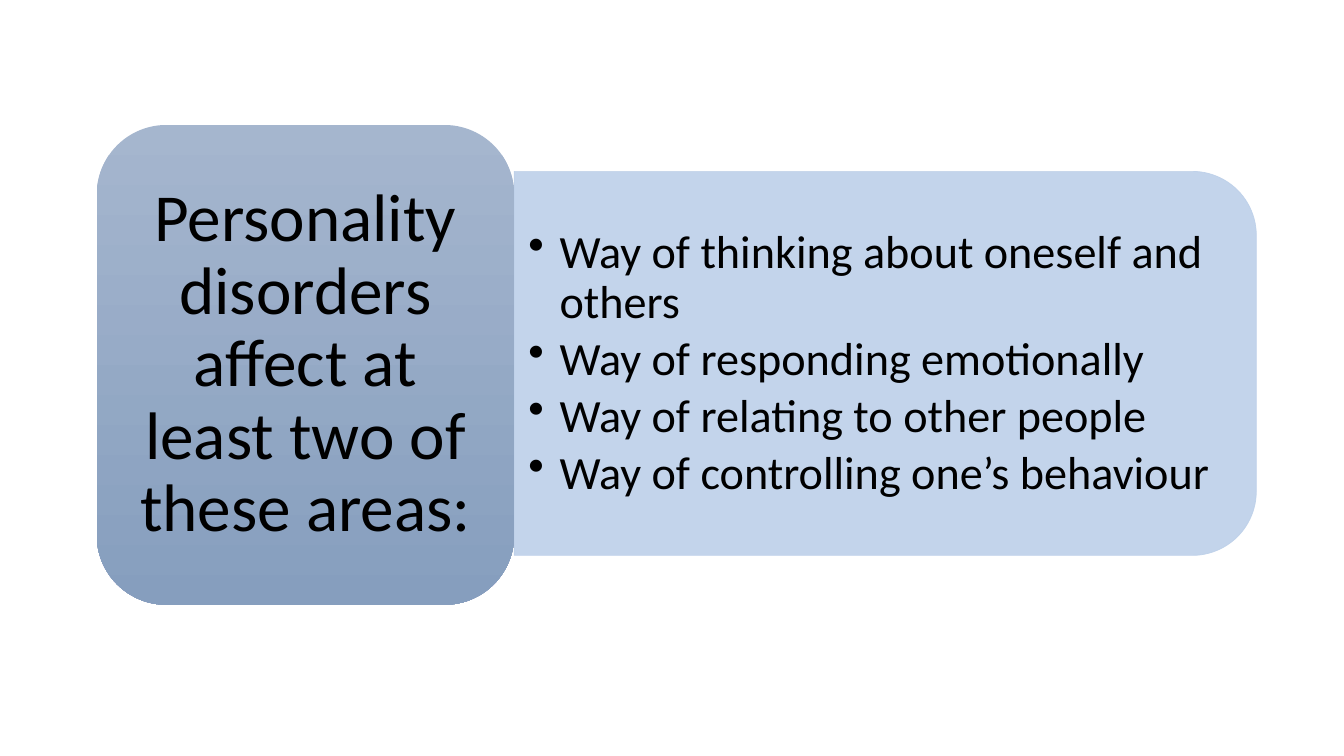
from lxml import etree
from pptx import Presentation
from pptx.dml.color import RGBColor
from pptx.enum.shapes import MSO_SHAPE
from pptx.enum.text import MSO_ANCHOR, PP_ALIGN
from pptx.oxml.ns import qn
from pptx.util import Inches, Pt

ROUND_TOP = MSO_SHAPE.ROUND_2_SAME_RECTANGLE
ROUNDED = MSO_SHAPE.ROUNDED_RECTANGLE
MIDDLE = MSO_ANCHOR.MIDDLE
CENTER = PP_ALIGN.CENTER
LEFT = PP_ALIGN.LEFT

HEADING = "Personality disorders affect at least two of these areas:"
AREAS = [
    "Way of thinking about oneself and others",
    "Way of responding emotionally",
    "Way of relating to other people",
    "Way of controlling one’s behaviour",
]


def color(value):
    return RGBColor.from_string(value)


def set_opacity(color_format_fill, percent):
    for element in color_format_fill.iter(qn("a:srgbClr")):
        alpha = etree.SubElement(element, qn("a:alpha"))
        alpha.set("val", str(percent * 1000))


def add_bullet(paragraph):
    properties = paragraph._p.get_or_add_pPr()
    properties.set("marL", str(Inches(0.31)))
    properties.set("indent", str(-Inches(0.31)))
    bullet = etree.SubElement(properties, qn("a:buChar"))
    bullet.set("char", "•")


def write_text(slide, box, margins, lines, size, align, space_after, bulleted):
    text_box = slide.shapes.add_textbox(*[Inches(length) for length in box])
    frame = text_box.text_frame
    frame.word_wrap = True
    frame.vertical_anchor = MIDDLE
    horizontal, vertical = margins
    frame.margin_left = frame.margin_right = Inches(horizontal)
    frame.margin_top = frame.margin_bottom = Inches(vertical)
    for index, line in enumerate(lines):
        paragraph = frame.paragraphs[0] if index == 0 else frame.add_paragraph()
        paragraph.text = line
        if bulleted:
            add_bullet(paragraph)
        paragraph.alignment = align
        paragraph.line_spacing = 0.9
        paragraph.space_after = Pt(space_after)
        paragraph.font.name = "Calibri"
        paragraph.font.size = Pt(size)
        paragraph.font.color.rgb = color("000000")


def add_areas_panel(slide, left, top, width, height):
    panel = slide.shapes.add_shape(
        ROUND_TOP,
        Inches(left + (width - height) / 2),
        Inches(top + (height - width) / 2),
        Inches(height),
        Inches(width),
    )
    panel.rotation = 90
    panel.shadow.inherit = False
    panel.fill.solid()
    panel.fill.fore_color.rgb = color("BDD0E9")
    panel.line.color.rgb = color("BDD0E9")
    panel.line.width = Pt(0.5)
    set_opacity(panel._element.spPr, 90)
    text_area = (left, top + 0.19, width - 0.19, height - 0.37)
    write_text(slide, text_area, (0.14, 0.07), AREAS, 33, LEFT, 5, True)


def add_heading_card(slide, left, top, width, height):
    card = slide.shapes.add_shape(
        ROUNDED, Inches(left), Inches(top), Inches(width), Inches(height)
    )
    card.shadow.inherit = False
    card.fill.gradient()
    card.fill.gradient_angle = 270
    for stop, value in zip(card.fill.gradient_stops, ("A5B6CE", "869EBE")):
        stop.color.rgb = color(value)
    first, last = card.fill.gradient_stops
    first.position, last.position = 0, 1
    card.line.fill.background()
    text_area = (left + 0.2, top + 0.2, width - 0.4, height - 0.4)
    write_text(slide, text_area, (0.2, 0.1), [HEADING], 48, CENTER, 17, False)


def main():
    presentation = Presentation()
    presentation.slide_width = Inches(13.33)
    presentation.slide_height = Inches(7.5)
    slide = presentation.slides.add_slide(presentation.slide_layouts[6])
    add_areas_panel(slide, 5.1, 1.7, 7.36, 3.81)
    add_heading_card(slide, 0.96, 1.24, 4.14, 4.76)
    presentation.save("out.pptx")


if __name__ == "__main__":
    main()
